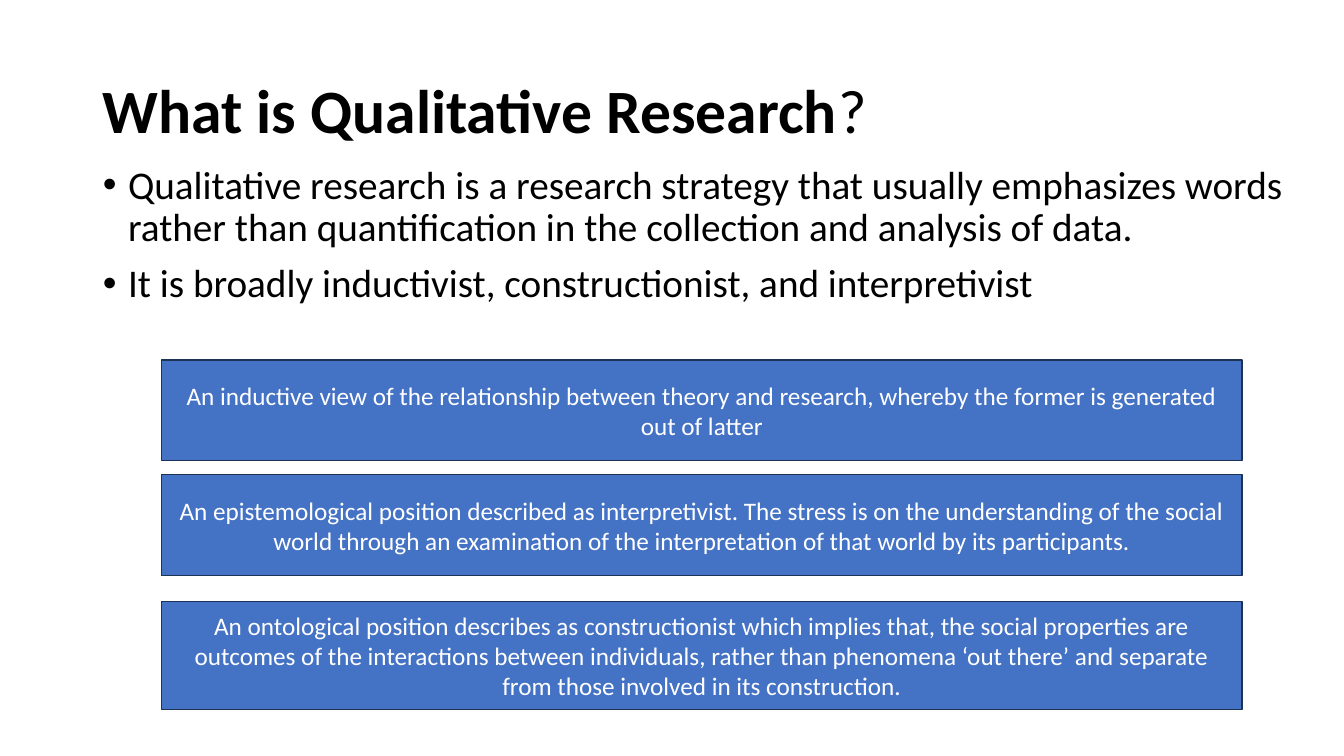
from pptx import Presentation
from pptx.dml.color import RGBColor
from pptx.enum.shapes import MSO_SHAPE as Shape
from pptx.enum.text import MSO_ANCHOR as Anchor, MSO_AUTO_SIZE as Auto, PP_ALIGN as Align
from pptx.util import Pt

BLACK = RGBColor(0x00, 0x00, 0x00)
WHITE = RGBColor(0xFF, 0xFF, 0xFF)
BLUE = RGBColor(0x44, 0x72, 0xC4)
NAVY = RGBColor(0x1E, 0x32, 0x56)

PX = 9144
SIZE = (1333, 750)
TITLE = [("What is Qualitative Research", True), ("?", False)]
POINTS = [
    "Qualitative research is a research strategy that usually emphasizes words rather than "
    "quantification in the collection and analysis of data.",
    "It is broadly inductivist, constructionist, and interpretivist",
]
VIEWS = [
    (357, 100, "An inductive view of the relationship between theory and research, whereby "
     "the former is generated out of latter"),
    (471, 100, "An epistemological position described as interpretivist. The stress is on the "
     "understanding of the social world through an examination of the interpretation of that "
     "world by its participants."),
    (597, 107, "An ontological position describes as constructionist which implies that, the "
     "social properties are outcomes of the interactions between individuals, rather than "
     "phenomena ‘out there’ and separate from those involved in its construction."),
]
TITLE_BOX = (92, 40, 1150, 145)
LIST_BOX = (92, 159, 1205, 578)
VIEW_LEFT, VIEW_WIDTH = 160, 1072
INDENT = 25

HEAD = {"name": "Calibri", "size": Pt(44), "color": BLACK}
BODY = {"name": "Calibri", "size": Pt(28), "color": BLACK}
NOTE = {"name": "Calibri", "size": Pt(18), "color": WHITE}
HEAD_PARA = {"alignment": Align.LEFT, "line_spacing": 0.9}
BODY_PARA = {**HEAD_PARA, "space_before": Pt(10)}
NOTE_PARA = {"alignment": Align.CENTER}


def emu(box):
    return [n * PX for n in box]


def apply(item, look):
    for key, val in look.items():
        setattr(item, key, val)


def write(para, text, look, layout, bold=False):
    apply(para, layout)
    run = para.add_run()
    run.text = text
    apply(run.font, {k: v for k, v in look.items() if k != "color"})
    run.font.bold = bold
    run.font.color.rgb = look["color"]


def place(shape, box, anchor):
    apply(shape, dict(zip(("left", "top", "width", "height"), emu(box))))
    apply(shape.text_frame, {"vertical_anchor": anchor, "auto_size": Auto.NONE,
                             "word_wrap": True})
    return shape.text_frame


def add_title(slide):
    frame = place(slide.shapes.title, TITLE_BOX, Anchor.MIDDLE)
    for text, bold in TITLE:
        write(frame.paragraphs[0], text, HEAD, HEAD_PARA, bold)


def add_list(slide):
    frame = place(slide.placeholders[1], LIST_BOX, Anchor.TOP)
    for i, text in enumerate(POINTS):
        para = frame.add_paragraph() if i else frame.paragraphs[0]
        write(para, text, BODY, BODY_PARA)
        props = para._p.get_or_add_pPr()
        props.set("marL", str(INDENT * PX))
        props.set("indent", str(-INDENT * PX))


def add_view(slide, top, height, text):
    box = (VIEW_LEFT, top, VIEW_WIDTH, height)
    shape = slide.shapes.add_shape(Shape.RECTANGLE, *emu(box))
    shape.shadow.inherit = False
    shape.fill.solid()
    shape.fill.fore_color.rgb = BLUE
    shape.line.color.rgb = NAVY
    shape.line.width = Pt(1)
    frame = place(shape, box, Anchor.MIDDLE)
    write(frame.paragraphs[0], text, NOTE, NOTE_PARA)


def main():
    """Build the slide on qualitative research."""
    deck = Presentation()
    deck.slide_width, deck.slide_height = emu(SIZE)
    slide = deck.slides.add_slide(deck.slide_layouts[1])
    add_title(slide)
    add_list(slide)
    for view in VIEWS:
        add_view(slide, *view)
    deck.save("out.pptx")


if __name__ == "__main__":
    main()
